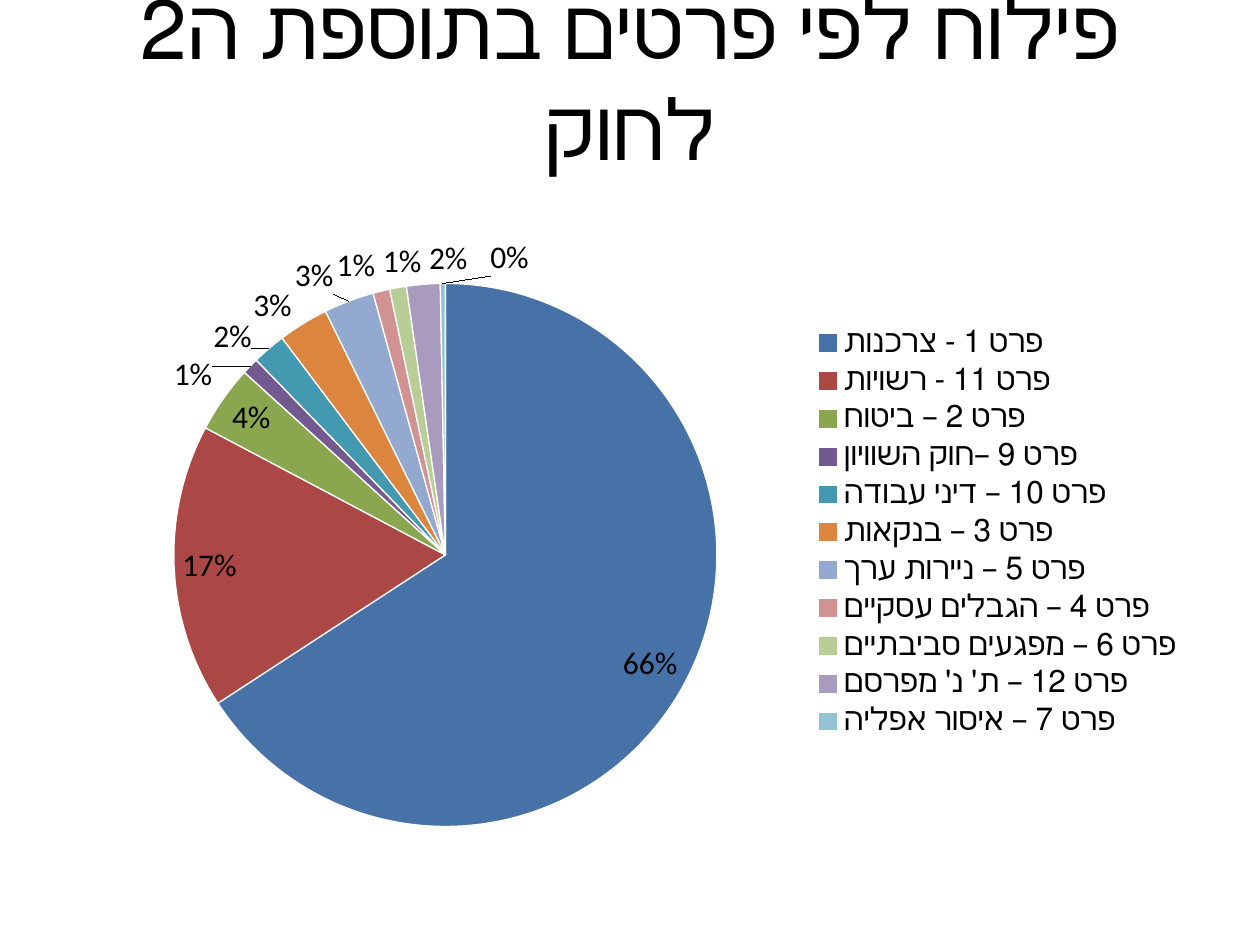
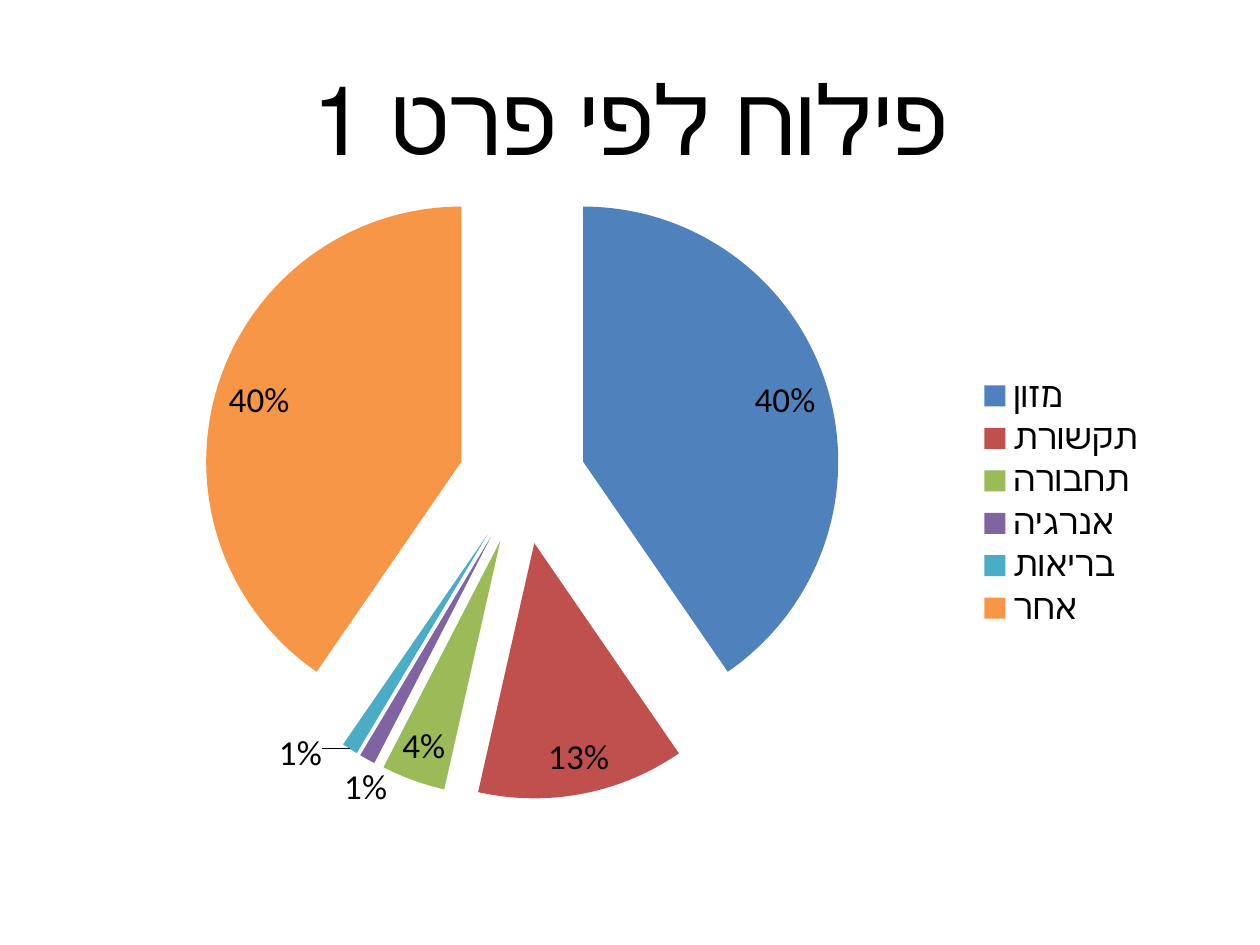
from dataclasses import dataclass

from pptx import Presentation
from pptx.chart.data import CategoryChartData
from pptx.dml.color import RGBColor
from pptx.enum.chart import XL_CHART_TYPE, XL_LABEL_POSITION, XL_LEGEND_POSITION
from pptx.enum.text import MSO_ANCHOR, MSO_AUTO_SIZE, PP_ALIGN
from pptx.oxml import parse_xml
from pptx.oxml.ns import nsdecls
from pptx.util import Pt, Inches


@dataclass(frozen=True)
class Theme:
    """Colours, font and type sizes of the slides."""
    font: str = "Calibri"
    ink: str = "000000"
    paper: str = "FFFFFF"
    accents: tuple = ("4F81BD", "C0504D", "9BBB59", "8064A2", "4BACC6", "F79646")
    muted: tuple = ("4672A8", "AB4744", "8AA64F", "725990", "4299B0", "DC853E",
                    "93A9CF", "D19392", "B9CD96", "A99BBD", "91C3D5")
    long_title: int = 48
    short_title: int = 55
    long_legend: int = 18
    short_legend: int = 20


THEME = Theme()
COLUMNS, ROWS = 10, 7.5
WIDTH, HEIGHT = Inches(10), Inches(7.5)


def place(box):
    """Turn columns and rows of the slide grid into left, top, width and height."""
    left, top, width, height = box
    column, row = WIDTH / COLUMNS, HEIGHT / ROWS
    return round(left * column), round(top * row), round(width * column), round(height * row)


def format_font(font, size, color=THEME.ink):
    """Set the family, size and colour of a font."""
    font.name, font.size = THEME.font, Pt(size)
    font.color.rgb = RGBColor.from_string(color)


def write_text(shape, text, size, color=THEME.ink, align=PP_ALIGN.CENTER, anchor=MSO_ANCHOR.MIDDLE):
    """Write one right-to-left paragraph into a shape."""
    frame = shape.text_frame
    frame.word_wrap, frame.auto_size = True, MSO_AUTO_SIZE.NONE
    frame.vertical_anchor = anchor
    paragraph = frame.paragraphs[0]
    paragraph.alignment = align
    paragraph._p.get_or_add_pPr().set("rtl", "1")
    run = paragraph.add_run()
    run.text = text
    format_font(run.font, size, color)


def add_title(slide, box, text, size):
    """Move the title placeholder into its box and fill it."""
    title = slide.shapes.title
    title.left, title.top, title.width, title.height = place(box)
    write_text(title, text, size)


def set_plot_box(chart, box, pie_box):
    """Fix the pie at its grid box inside the chart's box."""
    left, top, width, height = box
    pie_left, pie_top, pie_width, pie_height = pie_box
    shares = ((pie_left - left) / width, (pie_top - top) / height,
              pie_width / width, pie_height / height)
    plot_area = chart.element.xpath("c:chart/c:plotArea")[0]
    for layout in plot_area.xpath("c:layout"):
        plot_area.remove(layout)
    modes = "".join(f'<c:{edge}Mode val="edge"/>' for edge in "xy")
    sizes = "".join(f'<c:{key} val="{share}"/>' for key, share in zip("xywh", shares))
    plot_area.insert(0, parse_xml(
        f'<c:layout {nsdecls("c")}><c:manualLayout><c:layoutTarget val="inner"/>'
        f"{modes}{sizes}</c:manualLayout></c:layout>"))


def explode_slices(chart, percent):
    """Pull every slice away from the centre."""
    for properties in chart.element.xpath(".//c:dPt/c:spPr"):
        properties.addprevious(parse_xml(f'<c:explosion {nsdecls("c")} val="{percent}"/>'))


def add_pie(slide, box, pie_box, shares, colors, size, outlined=False, explosion=0):
    """Draw a pie with percentages and a legend on its right."""
    data = CategoryChartData(number_format="General")
    data.categories = list(shares)
    data.add_series("Series 1", list(shares.values()))
    chart = slide.shapes.add_chart(XL_CHART_TYPE.PIE, *place(box), data).chart
    chart.has_title = False
    format_font(chart.font, size)
    chart.has_legend = True
    chart.legend.position = XL_LEGEND_POSITION.RIGHT
    chart.legend.include_in_layout = False

    plot = chart.plots[0]
    plot.vary_by_categories = True
    series = plot.series[0]
    for index, color in zip(range(len(shares)), colors):
        slice_format = series.points[index].format
        slice_format.fill.solid()
        slice_format.fill.fore_color.rgb = RGBColor.from_string(color)
        if outlined:
            slice_format.line.color.rgb = RGBColor.from_string(THEME.paper)
            slice_format.line.width = Pt(0.75)
        else:
            slice_format.line.fill.background()

    labels = series.data_labels
    labels.show_value, labels.show_percentage = False, True
    labels.number_format, labels.number_format_is_linked = "0%", False
    labels.position = XL_LABEL_POSITION.BEST_FIT
    format_font(labels.font, size)
    set_plot_box(chart, box, pie_box)
    if explosion:
        explode_slices(chart, explosion)


def build_sections_slide(slide):
    """Show the split by sections of the law's second schedule."""
    shares = {
        "פרט 1 - צרכנות": 66,
        "פרט 11 - רשויות": 17,
        "פרט 2 – ביטוח": 4,
        "פרט 9 –חוק השוויון": 1,
        "פרט 10 – דיני עבודה": 2,
        "פרט 3 – בנקאות": 3,
        "פרט 5 – ניירות ערך": 3,
        "פרט 4 – הגבלים עסקיים": 1,
        "פרט 6 – מפגעים סביבתיים": 1,
        "פרט 12 – ת' נ' מפרסם": 2,
        "פרט 7 – איסור אפליה": 0.3,
    }
    add_title(slide, (0.5, 0.3, 9, 0.61), "פילוח לפי פרטים בתוספת ה2 לחוק", THEME.long_title)
    add_pie(slide, (0.5, 1.75, 9, 4.95), (1.38, 2.25, 4.31, 4.31), shares,
            THEME.muted, THEME.long_legend, outlined=True)


def build_consumer_slide(slide):
    """Show the split of the consumer section by field."""
    shares = {"מזון ": 40, "תקשורת": 13, "תחבורה ": 4, "אנרגיה ": 1, "בריאות ": 1, "אחר ": 40}
    add_title(slide, (0.5, 0.3, 9, 1.25), "פילוח לפי פרט 1", THEME.short_title)
    add_pie(slide, (0.55, 1.15, 8.66, 5.67), (2.12, 1.79, 4.05, 4.05), shares,
            THEME.accents, THEME.short_legend, explosion=25)


def main():
    """Build both slides and save them."""
    presentation = Presentation()
    presentation.slide_width, presentation.slide_height = WIDTH, HEIGHT
    title_only = presentation.slide_layouts[5]
    for build in (build_sections_slide, build_consumer_slide):
        build(presentation.slides.add_slide(title_only))
    presentation.save("out.pptx")


if __name__ == "__main__":
    main()
